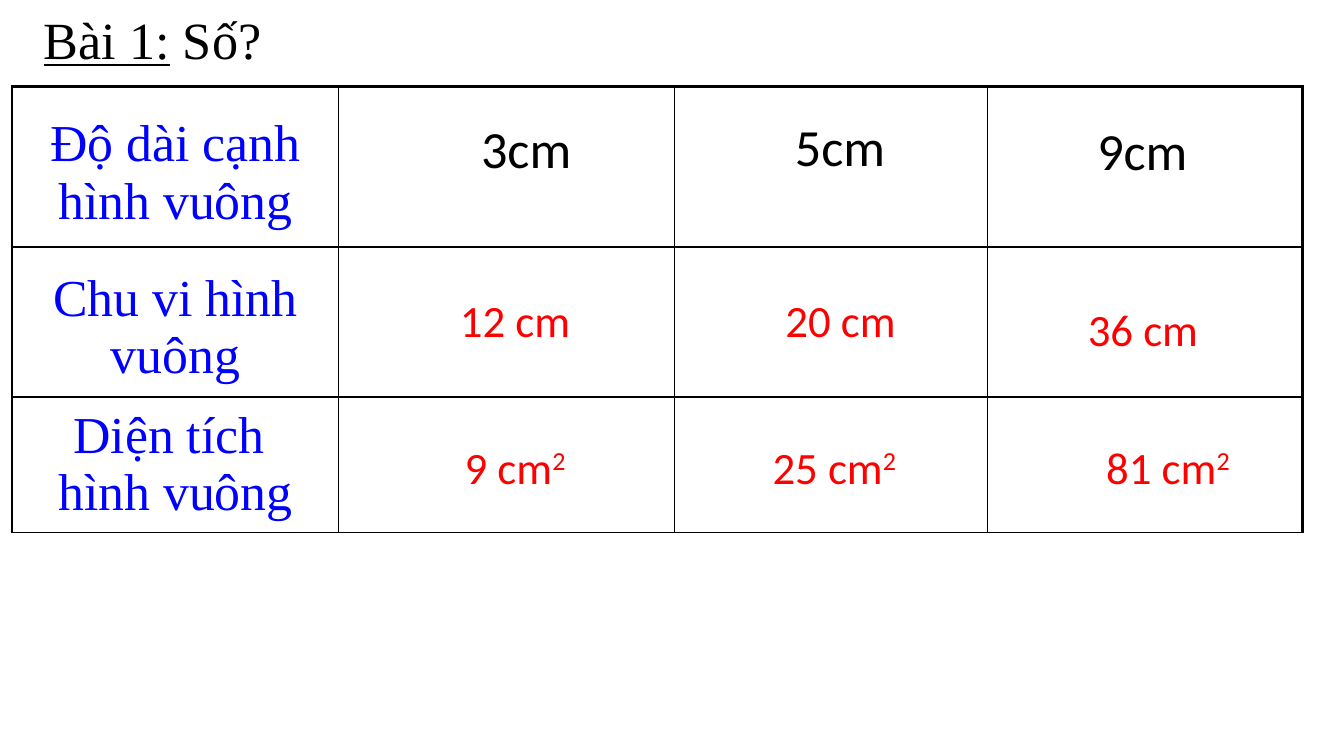
from pptx import Presentation
from pptx import util as u
from pptx.dml.color import RGBColor
from pptx.enum import text
from pptx.oxml import parse_xml
from pptx.oxml.ns import nsdecls

BLACK = RGBColor(0, 0, 0)
BLUE = RGBColor(0, 0, 255)
RED = RGBColor(255, 0, 0)
SERIF, SANS = "Times New Roman", "Calibri"
MID = text.MSO_ANCHOR.MIDDLE
TOP = text.MSO_ANCHOR.TOP


class Sheet:
    """Draws on one slide, with lengths in a grid of 40 columns and 30 rows."""

    def __init__(self, deck):
        self.col = deck.slide_width / 40
        self.row = deck.slide_height / 30
        self.slide = deck.slides.add_slide(deck.slide_layouts[5])

    def area(self, x, y, w, h):
        return [int(v) for v in (x * self.col, y * self.row, w * self.col, h * self.row)]

    def fill(self, para, runs, align, size, face, color):
        para.alignment = align
        for words, extra in runs:
            run = para.add_run()
            run.text = words
            look = {"size": u.Pt(size), "name": face, "bold": False}
            base = extra.get("base")
            look.update((k, v) for k, v in extra.items() if k != "base")
            for key, val in look.items():
                setattr(run.font, key, val)
            run.font.color.rgb = color
            if base:
                run.font._element.set("baseline", str(base * 1000))

    def title(self, runs, *spot):
        box = self.slide.shapes.title
        box.left, box.top, box.width, box.height = self.area(*spot)
        look = {"word_wrap": True, "auto_size": text.MSO_AUTO_SIZE.NONE,
                "vertical_anchor": TOP, "margin_top": u.Inches(0.1)}
        for key, val in look.items():
            setattr(box.text_frame, key, val)
        self.fill(box.text_frame.paragraphs[0], runs, text.PP_ALIGN.LEFT, 37.3, SERIF, BLACK)

    def label(self, runs, mid, y, w, h, size, color):
        box = self.slide.shapes.add_textbox(*self.area(mid - w / 2, y, w, h))
        box.text_frame.word_wrap = True
        self.fill(box.text_frame.paragraphs[0], runs, text.PP_ALIGN.CENTER, size, SANS, color)

    def edge(self, cell, widths):
        props = cell._tc.get_or_add_tcPr()
        for i, (side, pts) in enumerate(zip("LRTB", widths)):
            props.insert(i, parse_xml(
                f'<a:ln{side} {nsdecls("a")} w="{u.Pt(pts)}"><a:solidFill>'
                f'<a:srgbClr val="{BLACK}"/></a:solidFill></a:ln{side}>'))

    def table(self, heads, x, y, cols, rows):
        frame = self.slide.shapes.add_table(
            len(rows), len(cols), *self.area(x, y, sum(cols), sum(rows)))
        grid = frame.table
        for flag in ("first_row", "horz_banding"):
            setattr(grid, flag, False)
        for part, wide in zip(grid.columns, cols):
            part.width = int(wide * self.col)
        for part, high in zip(grid.rows, rows):
            part.height = int(high * self.row)
        for r in range(len(rows)):
            for c in range(len(cols)):
                cell = grid.cell(r, c)
                cell.fill.background()
                self.edge(cell, (2.25 if c == 0 else 1, 2.25 if c == len(cols) - 1 else 1,
                                 2.25 if r == 0 else 1, 1))
        for r, (lines, anchor, gap) in enumerate(heads):
            cell = grid.cell(r, 0)
            look = {"vertical_anchor": anchor, "margin_left": u.Inches(0.13),
                    "margin_right": u.Inches(0.13), "margin_top": u.Inches(gap)}
            for key, val in look.items():
                setattr(cell, key, val)
            for i, line in enumerate(lines):
                body = cell.text_frame
                para = body.add_paragraph() if i else body.paragraphs[0]
                self.fill(para, [(line, {})], text.PP_ALIGN.CENTER, 37, SERIF, BLUE)


def main():
    deck = Presentation()
    deck.slide_width, deck.slide_height = u.Inches(13.33), u.Inches(7.5)
    page = Sheet(deck)
    page.title([("Bài 1:", {"underline": True}), (" Số?", {"underline": False})],
               1, -0.12, 36.67, 2.92)
    page.table([(["Độ dài cạnh hình vuông"], TOP, 0.29),
                (["Chu vi hình vuông"], MID, 0.16),
                (["Diện tích ", "hình vuông"], MID, 0.05)],
               0.36, 3.44, (9.72, 9.99, 9.33, 9.36), (6.36, 5.96, 5.36))
    for words, mid, y in (("3cm", 15.66, 4.4), ("5cm", 25, 4.32), ("9cm", 34, 4.48)):
        page.label([(words, {})], mid, y, 6, 2.92, 37.3, BLACK)
    for words, mid, y in (("12 cm", 15.33, 11.44), ("20 cm", 25.02, 11.44),
                          ("36 cm", 34.02, 11.76)):
        page.label([(words, {})], mid, y, 10.68, 2.56, 32, RED)
    for words, mid, w in (("9 cm", 15.33, 10.68), ("25 cm", 24.83, 11.01),
                          ("81 cm", 34.76, 11.55)):
        page.label([(words, {}), ("2", {"base": 30})], mid, 17.24, w, 2.56, 32, RED)
    deck.save("out.pptx")


if __name__ == "__main__":
    main()
